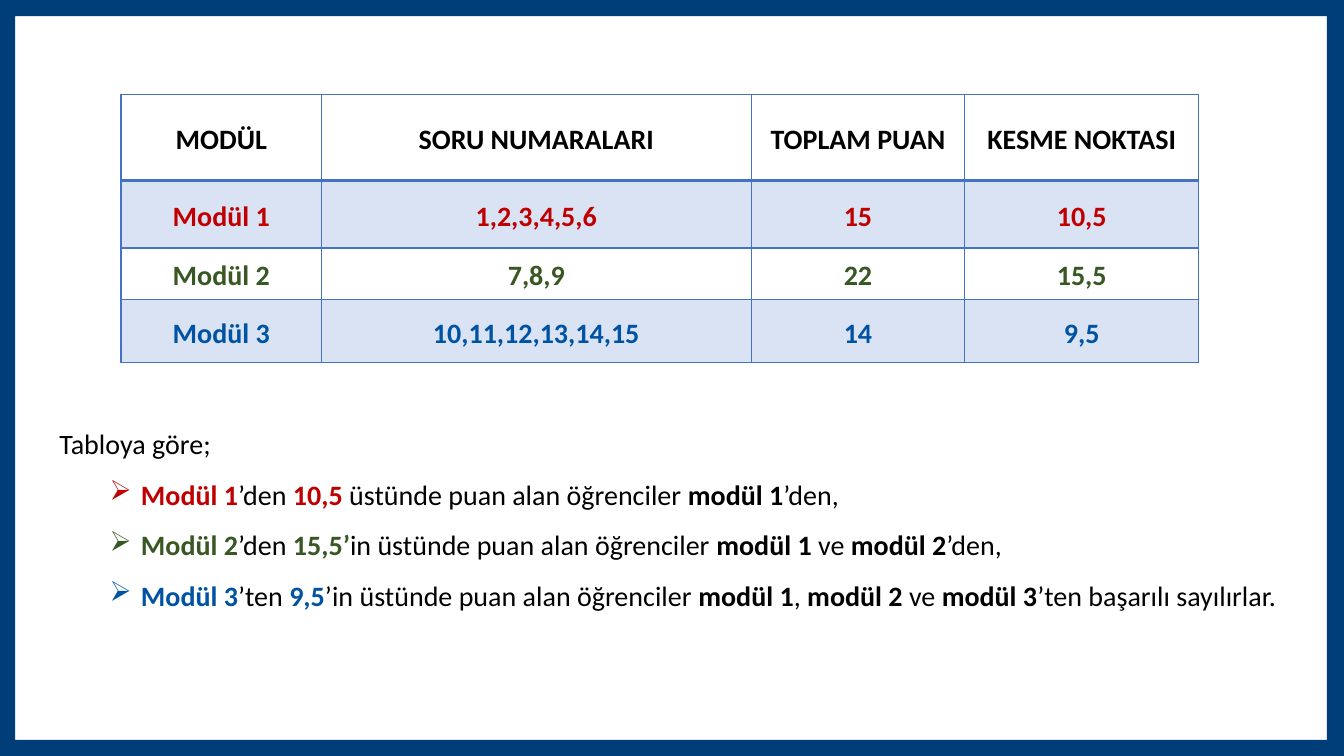
from lxml import etree
from pptx import Presentation
from pptx.dml.color import RGBColor
from pptx.enum.text import MSO_ANCHOR, MSO_AUTO_SIZE, PP_ALIGN
from pptx.oxml import parse_xml
from pptx.oxml.ns import nsdecls, qn
from pptx.util import Inches, Pt

NAVY = RGBColor(0x00, 0x3E, 0x7A)
BLACK = RGBColor(0x00, 0x00, 0x00)
RED = RGBColor(0xC0, 0x00, 0x00)
GREEN = RGBColor(0x38, 0x57, 0x23)
BLUE = RGBColor(0x00, 0x53, 0xA3)
BORDER = RGBColor(0x44, 0x72, 0xC4)
BAND = RGBColor(0xDA, 0xE3, 0xF3)


def set_font(font, color, bold):
    font.name = "Calibri"
    font.size = Pt(20)
    font.color.rgb = color
    font.bold = bold


def set_borders(cell, top, bottom):
    widths = {"lnL": 1, "lnR": 1, "lnT": top, "lnB": bottom}
    for position, (side, width) in enumerate(widths.items()):
        line = parse_xml(
            f'<a:{side} {nsdecls("a")} w="{Pt(width)}"><a:solidFill>'
            f'<a:srgbClr val="{BORDER}"/></a:solidFill></a:{side}>'
        )
        cell._tc.get_or_add_tcPr().insert(position, line)


prs = Presentation()
prs.slide_width = Inches(13.33)
prs.slide_height = Inches(7.5)
slide = prs.slides.add_slide(prs.slide_layouts[6])

outer = [(13.33, 0), (13.33, 7.5), (0, 7.5)]
inner = [(0.15, 7.34), (13.16, 7.34), (13.16, 0.16)]
outline = slide.shapes.build_freeform(0, 0)
outline.add_line_segments([(Inches(x), Inches(y)) for x, y in outer])
outline.move_to(Inches(0.15), Inches(0.16))
outline.add_line_segments([(Inches(x), Inches(y)) for x, y in inner])
frame = outline.convert_to_shape()
frame.shadow.inherit = False
frame.fill.solid()
frame.fill.fore_color.rgb = NAVY
frame.line.fill.background()

explanation = slide.shapes.add_textbox(
    Inches(0.49), Inches(4.02), Inches(12.36), Inches(2.12)
).text_frame
explanation.word_wrap = True
explanation.auto_size = MSO_AUTO_SIZE.SHAPE_TO_FIT_TEXT
intro = explanation.paragraphs[0]
intro.text = "Tabloya göre;"
intro.line_spacing = 1.5
set_font(intro.font, BLACK, False)

rules = [
    (RED, ["Modül 1", "’den ", "10,5", " üstünde puan alan öğrenciler ",
           "modül 1", "’den,"]),
    (GREEN, ["Modül 2", "’den ", "15,5’", "in üstünde puan alan öğrenciler ",
             "modül 1", " ve ", "modül 2", "’den,"]),
    (BLUE, ["Modül 3", "’ten ", "9,5", "’in üstünde puan alan öğrenciler ",
            "modül 1", ", ", "modül 2", " ve ", "modül 3",
            "’ten başarılı sayılırlar."]),
]
for color, pieces in rules:
    rule = explanation.add_paragraph()
    rule.level = 1
    rule.line_spacing = 1.5
    for index, piece in enumerate(pieces):
        run = rule.add_run()
        run.text = piece
        set_font(run.font, color if index in (0, 2) else BLACK, index % 2 == 0)
    properties = rule._p.get_or_add_pPr()
    properties.set("marL", str(Inches(0.81)))
    properties.set("indent", str(Inches(-0.31)))
    bullet_color = etree.SubElement(properties, qn("a:buClr"))
    etree.SubElement(bullet_color, qn("a:srgbClr"), val=str(color))
    etree.SubElement(properties, qn("a:buChar"), char="➢")

modules = [
    (BLACK, 0.85, ["MODÜL", "SORU NUMARALARI", "TOPLAM PUAN", "KESME NOKTASI"]),
    (RED, 0.67, ["Modül 1", "1,2,3,4,5,6", "15", "10,5"]),
    (GREEN, 0.51, ["Modül 2", "7,8,9", "22", "15,5"]),
    (BLUE, 0.63, ["Modül 3", "10,11,12,13,14,15", "14", "9,5"]),
]
score_table = slide.shapes.add_table(
    4, 4, Inches(1.2), Inches(0.94), Inches(10.69), Inches(2.66)
).table
for column, width in zip(score_table.columns, [1.99, 4.26, 2.12, 2.32]):
    column.width = Inches(width)
for row, (color, height, values) in enumerate(modules):
    score_table.rows[row].height = Inches(height)
    for cell, value in zip(score_table.rows[row].cells, values):
        cell.vertical_anchor = MSO_ANCHOR.MIDDLE
        cell.margin_left = cell.margin_right = Inches(0.05)
        cell.margin_top = cell.margin_bottom = 0
        if row % 2:
            cell.fill.solid()
            cell.fill.fore_color.rgb = BAND
        else:
            cell.fill.background()
        set_borders(cell, 2 if row == 1 else 1, 2 if row == 0 else 1)
        entry = cell.text_frame.paragraphs[0]
        entry.text = value
        entry.alignment = PP_ALIGN.CENTER
        entry.line_spacing = 1.15
        set_font(entry.font, color, True)

prs.save("out.pptx")
